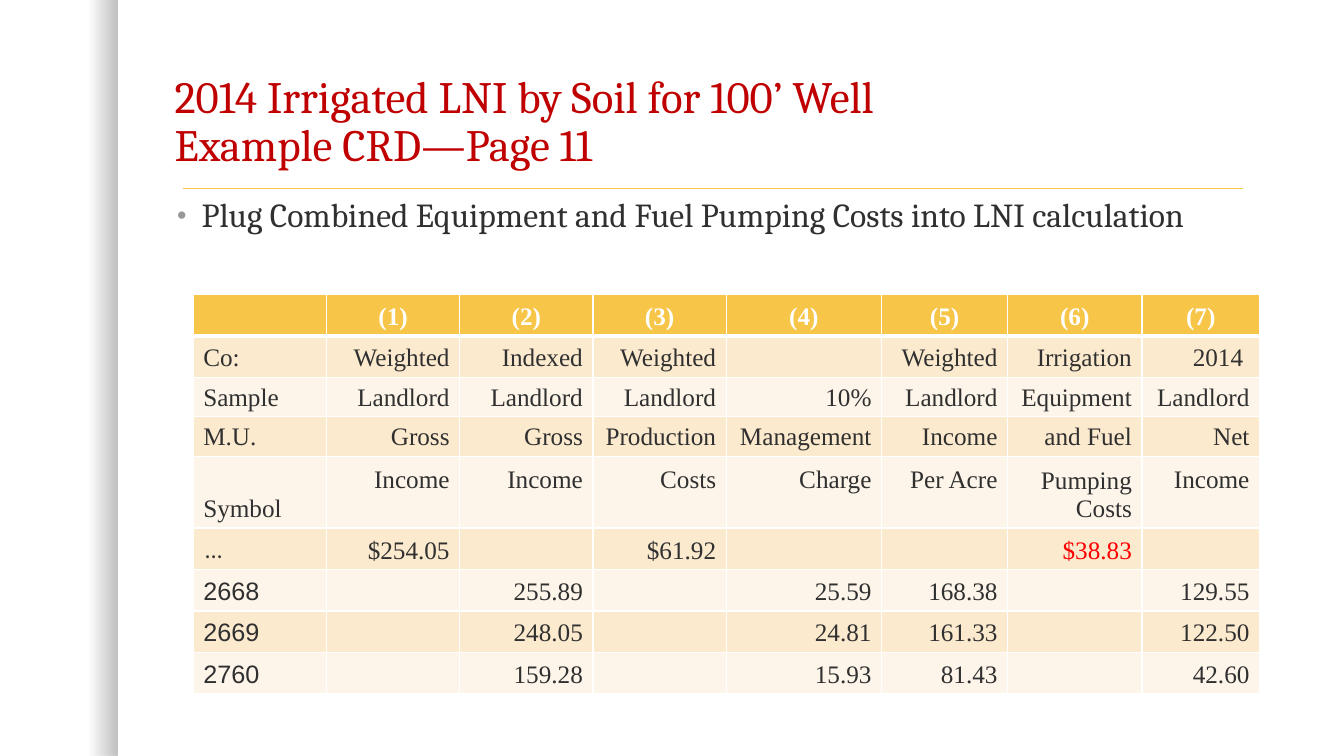
import pptx
import pptx.dml.color
import pptx.enum.dml
import pptx.enum.shapes
import pptx.enum.text
import pptx.oxml
import pptx.oxml.ns
import pptx.util
from lxml import etree

Pt = pptx.util.Pt
ALIGN = pptx.enum.text.PP_ALIGN
ANCHOR = pptx.enum.text.MSO_ANCHOR
COLORS = {
    "title": "C00000", "text": "303030", "bullet": "989898", "gold": "F7C547",
    "band dark": "FCEACF", "band light": "FDF5E9", "white": "FFFFFF",
    "cost": "FF0000", "shadow": "000000",
}


def add_span(para, text, size, font, color, bold=False):
    span = para.add_run()
    span.text = text
    span.font.size = Pt(size)
    span.font.name = font
    span.font.bold = bold
    span.font.color.rgb = pptx.dml.color.RGBColor.from_string(COLORS[color])


def add_element(parent, tag, **attributes):
    element = etree.SubElement(parent, pptx.oxml.ns.qn(tag))
    for name, value in attributes.items():
        element.set(name, str(value))
    return element


deck = pptx.Presentation()
deck.slide_width, deck.slide_height = Pt(960), Pt(540)
page = deck.slides.add_slide(deck.slide_layouts[5])

# Shaded left edge
edge = page.shapes.add_shape(
    pptx.enum.shapes.MSO_SHAPE.RECTANGLE, Pt(0), Pt(0), Pt(84), Pt(540))
edge.shadow.inherit = False
edge.line.fill.background()
edge.fill.gradient()
edge.fill.gradient_angle = 0
for stop, position in zip(edge.fill.gradient_stops, (0.75, 1)):
    stop.position = position
    stop.color.rgb = pptx.dml.color.RGBColor.from_string(COLORS["shadow"])
for color, alpha in zip(edge._element.spPr.xpath(".//a:gs/a:srgbClr"), (0, 25000)):
    add_element(color, "a:alpha", val=alpha)

# Rule under the title
rule = page.shapes.add_connector(
    pptx.enum.shapes.MSO_CONNECTOR.STRAIGHT, Pt(130.5), Pt(134.5), Pt(888), Pt(134.5))
rule.line.color.rgb = pptx.dml.color.RGBColor.from_string(COLORS["gold"])
rule.line.width = Pt(1)
add_element(rule._element.spPr, "a:effectLst")

# Title
title = page.shapes.title
title.left, title.top, title.width, title.height = Pt(117.5), Pt(31.5), Pt(776), Pt(94.5)
title.text_frame.auto_size = pptx.enum.text.MSO_AUTO_SIZE.NONE
title.text_frame.vertical_anchor = ANCHOR.BOTTOM
para = title.text_frame.paragraphs[0]
para.alignment = ALIGN.LEFT
para.line_spacing = 0.9
add_span(para, "2014 Irrigated LNI by Soil for 100’ Well", 32, "Cambria", "title")
para.add_line_break()
add_span(para, "Example CRD—Page 11", 32, "Cambria", "title")

# Bullet
box = page.shapes.add_textbox(Pt(119.5), Pt(138.5), Pt(774), Pt(40))
box.text_frame.word_wrap = True
para = box.text_frame.paragraphs[0]
para.line_spacing = 0.9
properties = para._p.get_or_add_pPr()
properties.set("marL", str(Pt(17.5)))
properties.set("indent", str(-Pt(17.5)))
add_element(add_element(properties, "a:buClr"), "a:srgbClr", val=COLORS["bullet"])
add_element(properties, "a:buSzPct", val=80000)
add_element(properties, "a:buFont", typeface="Arial")
add_element(properties, "a:buChar", char="•")
add_span(para, "Plug Combined Equipment and Fuel Pumping Costs into LNI calculation",
         24, "Cambria", "text")

# Net income table
rows = [
    ["", "(1)", "(2)", "(3)", "(4)", "(5)", "(6)", "(7)"],
    ["Co:", "Weighted", "Indexed", "Weighted", "", "Weighted", "Irrigation", "2014 "],
    ["Sample", "Landlord", "Landlord", "Landlord", "10%", "Landlord", "Equipment", "Landlord"],
    ["M.U.", "Gross", "Gross", "Production", "Management", "Income", "and Fuel", "Net"],
    ["Symbol", "Income", "Income", "Costs", "Charge", "Per Acre", "Pumping Costs", "Income"],
    ["…", "$254.05", "", "$61.92", "", "", "$38.83", ""],
    ["2668", "", "255.89", "", "25.59", "168.38", "", "129.55"],
    ["2669", "", "248.05", "", "24.81", "161.33", "", "122.50"],
    ["2760", "", "159.28", "", "15.93", "81.43", "", "42.60"],
]
widths = [95.2, 95.2, 95.2, 95.2, 111, 90, 96, 84]
heights = [29.6, 29.6, 27.3, 27.3, 51.4, 29.6, 29.6, 29.6, 29.6]
symbol_row = 4
label_fonts = {"…": "Cambria", "2668": "Arial", "2669": "Arial", "2760": "Arial"}

table = page.shapes.add_table(
    len(rows), len(widths), Pt(138), Pt(210.2), Pt(sum(widths)), Pt(sum(heights))).table
for column, width in zip(table.columns, widths):
    column.width = Pt(width)
for row, height in zip(table.rows, heights):
    row.height = Pt(height)

for row_index, texts in enumerate(rows):
    header = row_index == 0
    band = "gold" if header else "band dark" if row_index % 2 else "band light"
    for column_index, text in enumerate(texts):
        cell = table.cell(row_index, column_index)
        cell.margin_top, cell.margin_bottom = Pt(3), Pt(3.6)
        cell.vertical_anchor = ANCHOR.BOTTOM
        # One-line headings sit on the first line of the tall row
        if row_index == symbol_row and column_index and text != "Pumping Costs":
            cell.vertical_anchor = ANCHOR.TOP
            cell.margin_top = Pt(7)

        # White borders, heavier under the header, come before the fill
        for side in ("L", "R", "T", "B"):
            heavy = (row_index, side) in ((0, "B"), (1, "T"))
            border = add_element(cell._tc.get_or_add_tcPr(), "a:ln" + side,
                                 w=Pt(3 if heavy else 1))
            add_element(add_element(border, "a:solidFill"), "a:srgbClr", val=COLORS["white"])
        cell.fill.solid()
        cell.fill.fore_color.rgb = pptx.dml.color.RGBColor.from_string(COLORS[band])

        if text:
            para = cell.text_frame.paragraphs[0]
            para.alignment = (ALIGN.CENTER if header else
                              ALIGN.RIGHT if column_index else ALIGN.LEFT)
            color = "white" if header else "cost" if text == "$38.83" else "text"
            add_span(para, text, 18, label_fonts.get(text, "Times New Roman"), color, header)

deck.save("out.pptx")
